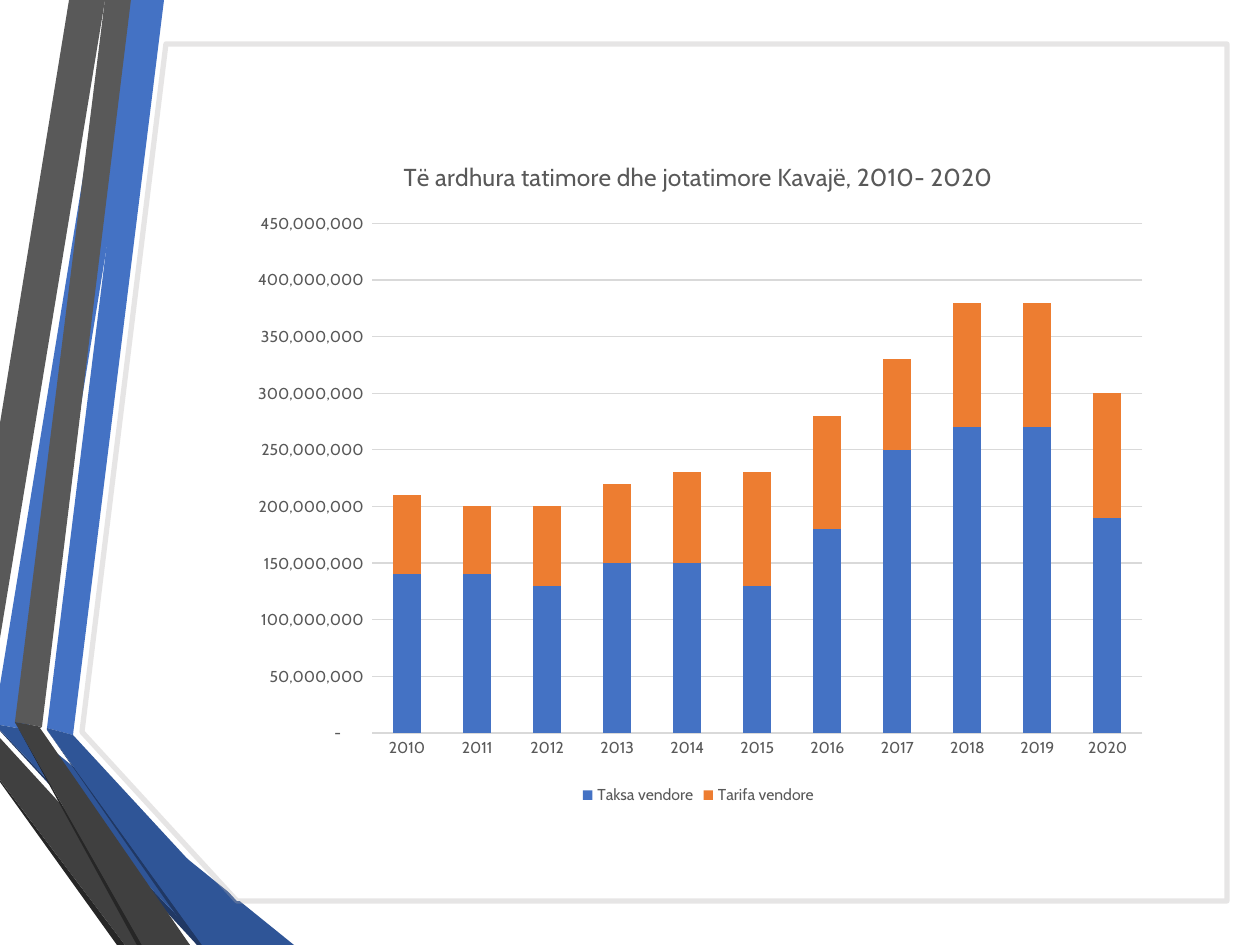
from dataclasses import dataclass
from typing import Any

from lxml import etree
from pptx import Presentation, util as u
from pptx.chart.data import CategoryChartData
from pptx.dml.color import RGBColor
from pptx.enum import chart as ch
from pptx.oxml.ns import qn

PX = u.Inches(1) / 126
WIDTH, HEIGHT = 1260, 945

BLUE = RGBColor(0x44, 0x72, 0xC4)
BLUE_SHADE = RGBColor(0x2F, 0x55, 0x97)
NAVY = RGBColor(0x20, 0x38, 0x64)
GREY = RGBColor(0x59, 0x59, 0x59)
GREY_SHADE = RGBColor(0x40, 0x40, 0x40)
CHARCOAL = RGBColor(0x26, 0x26, 0x26)
ORANGE = RGBColor(0xED, 0x7D, 0x31)
WHITE = RGBColor(0xFF, 0xFF, 0xFF)
FRAME_GREY = RGBColor(0xAF, 0xAB, 0xAB)
GRID_GREY = RGBColor(0xD9, 0xD9, 0xD9)
FONT = "Cabin"
FRAME_OPACITY = "30000"


@dataclass(frozen=True)
class Ribbon:
    color: RGBColor
    points: tuple[tuple[int, int], ...]


@dataclass(frozen=True)
class Revenue:
    name: str
    color: RGBColor
    millions: tuple[int, ...]


RIBBONS = (
    Ribbon(BLUE, ((0, 685), (0, 725), (28, 730), (147, 0), (112, 0))),
    Ribbon(GREY, ((105, 0), (69, 0), (0, 423), (0, 638))),
    Ribbon(CHARCOAL, ((0, 780), (0, 782), (117, 945), (125, 945))),
    Ribbon(NAVY, ((0, 730), (0, 731), (197, 945), (205, 945))),
    Ribbon(BLUE_SHADE, ((0, 730), (205, 945), (294, 945), (28, 730), (0, 725))),
    Ribbon(GREY_SHADE, ((0, 780), (125, 945), (190, 945), (0, 738))),
    Ribbon(BLUE, ((47, 728), (73, 735), (164, 0), (137, 0))),
    Ribbon(GREY, ((131, 0), (105, 0), (15, 722), (42, 727))),
    Ribbon(CHARCOAL, ((15, 722), (137, 945), (142, 945))),
    Ribbon(NAVY, ((47, 730), (197, 945), (202, 945))),
    Ribbon(BLUE_SHADE, ((47, 730), (202, 945), (267, 945), (73, 735), (47, 728))),
    Ribbon(GREY_SHADE, ((190, 945), (45, 735), (40, 728), (42, 727), (15, 722), (142, 945))),
)
FRAME = Ribbon(WHITE, ((166, 44), (1227, 44), (1227, 901), (237, 901), (82, 732)))

TITLE = "Të ardhura tatimore dhe jotatimore Kavajë, 2010- 2020"
YEARS = [str(year) for year in range(2010, 2021)]
REVENUES = (
    Revenue("Taksa vendore", BLUE, (140, 140, 130, 150, 150, 130, 180, 250, 270, 270, 190)),
    Revenue("Tarifa vendore", ORANGE, (70, 60, 70, 70, 80, 100, 100, 80, 110, 110, 110)),
)
AMOUNT_FORMAT = '_(* #,##0_);_(* \\(#,##0\\);_(* "-"??_);_('


def px(length: int) -> int:
    return round(length * PX)


def apply(target: Any, formats: dict[str, Any]) -> None:
    for attribute, value in formats.items():
        setattr(target, attribute, value)


def style_font(font: Any, size: int, color: RGBColor = GREY) -> None:
    apply(font, {"name": FONT, "size": u.Pt(size), "bold": False})
    font.color.rgb = color


def style_line(line: Any, color: RGBColor, width: float) -> None:
    line.color.rgb = color
    line.width = u.Pt(width)


def draw_ribbon(slide: Any, ribbon: Ribbon) -> Any:
    builder = slide.shapes.build_freeform(*ribbon.points[0], scale=PX)
    builder.add_line_segments(ribbon.points[1:], close=True)
    outline = builder.convert_to_shape()
    outline.shadow.inherit = False
    outline.fill.solid()
    outline.fill.fore_color.rgb = ribbon.color
    outline.line.fill.background()
    return outline


def draw_frame(slide: Any) -> None:
    frame = draw_ribbon(slide, FRAME)
    style_line(frame.line, FRAME_GREY, 3)
    line_color = frame.line._get_or_add_ln().find(f".//{qn('a:srgbClr')}")
    etree.SubElement(line_color, qn("a:alpha"), val=FRAME_OPACITY)


def draw_revenue_chart(slide: Any) -> None:
    data = CategoryChartData(number_format=AMOUNT_FORMAT)
    data.categories = YEARS
    for revenue in REVENUES:
        data.add_series(revenue.name, [value * 1_000_000 for value in revenue.millions])
    chart = slide.shapes.add_chart(
        ch.XL_CHART_TYPE.COLUMN_STACKED, px(236), px(135), px(925), px(675), data
    ).chart
    style_font(chart.font, 10, RGBColor(0, 0, 0))

    apply(chart, {"has_title": True, "has_legend": True})
    heading = chart.chart_title.text_frame
    heading.text = TITLE
    style_font(heading.paragraphs[0].runs[0].font, 14)
    apply(chart.legend, {"position": ch.XL_LEGEND_POSITION.BOTTOM, "include_in_layout": False})
    style_font(chart.legend.font, 9)

    plot = chart.plots[0]
    apply(plot, {"gap_width": 150, "overlap": 100, "vary_by_categories": False})
    for series, revenue in zip(plot.series, REVENUES):
        series.invert_if_negative = False
        series.format.fill.solid()
        series.format.fill.fore_color.rgb = revenue.color

    years, amounts = chart.category_axis, chart.value_axis
    for axis in (years, amounts):
        apply(axis, {
            "major_tick_mark": ch.XL_TICK_MARK.NONE,
            "minor_tick_mark": ch.XL_TICK_MARK.NONE,
        })
        style_font(axis.tick_labels.font, 9)
    style_line(years.format.line, GRID_GREY, 0.75)
    apply(amounts, {
        "has_major_gridlines": True,
        "minimum_scale": 0,
        "maximum_scale": 450_000_000,
        "major_unit": 50_000_000,
    })
    amounts.format.line.fill.background()
    style_line(amounts.major_gridlines.format.line, GRID_GREY, 0.75)
    apply(amounts.tick_labels, {
        "number_format": AMOUNT_FORMAT,
        "number_format_is_linked": False,
    })


def main() -> None:
    deck = Presentation()
    apply(deck, {"slide_width": px(WIDTH), "slide_height": px(HEIGHT)})
    slide = deck.slides.add_slide(deck.slide_layouts[6])
    for ribbon in RIBBONS:
        draw_ribbon(slide, ribbon)
    draw_frame(slide)
    draw_revenue_chart(slide)
    deck.save("out.pptx")


if __name__ == "__main__":
    main()
